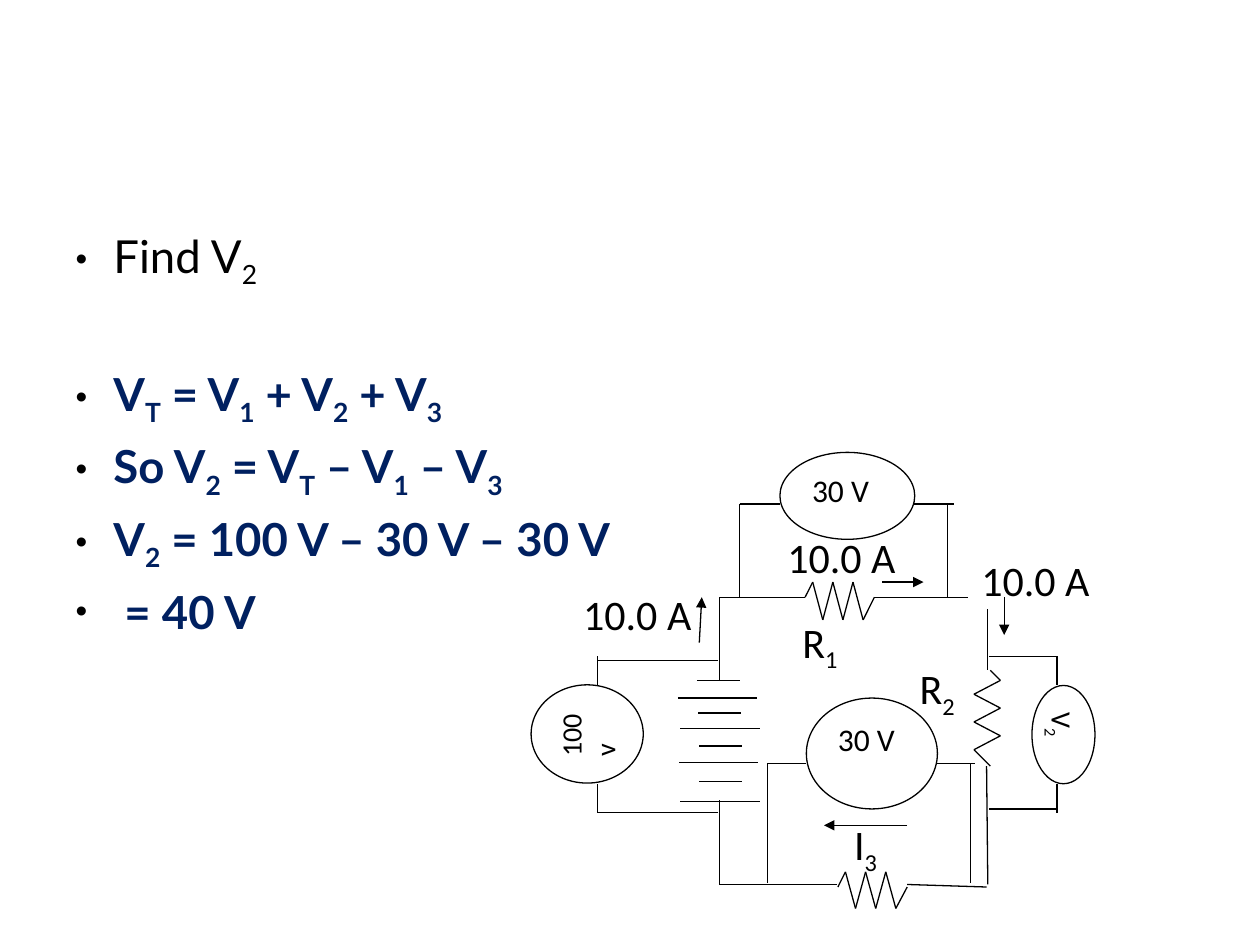
from lxml import etree
from pptx import Presentation
from pptx.dml.color import RGBColor
from pptx.enum.shapes import MSO_CONNECTOR, MSO_SHAPE
from pptx.enum.text import MSO_ANCHOR, MSO_AUTO_SIZE, PP_ALIGN
from pptx.oxml.ns import qn
from pptx.util import Cm, Pt

LINE = MSO_CONNECTOR.STRAIGHT
RECT, OVAL = MSO_SHAPE.RECTANGLE, MSO_SHAPE.OVAL
LEFT, TOP = PP_ALIGN.LEFT, MSO_ANCHOR.TOP
NOFIT = MSO_AUTO_SIZE.NONE
COLOURS = {"ink": "000000", "navy": "002060", "paper": "FFFFFF"}

STEPS = [
    ("Find V_2", "ink", 0),
    ("V_T = V_1 + V_2 + V_3", "navy", 43.2),
    ("So V_2 = V_T – V_1 – V_3", "navy", 6),
    ("V_2 = 100 V – 30 V – 30 V", "navy", 6),
    (" = 40 V", "navy", 6),
]
NAMES = [
    ("R_2", 7.2, 5.21, 0.77),
    ("R_1", 6.27, 4.84, 0.77),
    ("I_3", 6.68, 6.45, 0.77),
    ("10.0 A", 6.15, 4.17, 1.16),
]
AMPS = [("10.0 A", 4.53, 4.62, 1.16), ("10.0 A", 7.69, 4.35, 1.16)]
METERS = [
    ("30 V", (6.19, 3.59, 1.07, 0.69), 18, 0),
    ("V_2", (8.05, 5.58, 0.78, 0.5), 16, 90),
    ("30 V", (6.4, 5.54, 1.04, 0.88), 18, 0),
    ("100v", (4.27, 5.38, 0.78, 0.89), 16, 270),
]
WIRES = [
    [(6.94, 4.74), (7.83, 4.74)],
    [(6.39, 4.74), (5.71, 4.74), (5.71, 5.4)],
    [(7.84, 4.74), (7.84, 5.32)],
    [(7.83, 6.08), (7.84, 7.02)],
    [(7.83, 7.04), (7.2, 7.02)],
    [(6.64, 7.02), (5.71, 7.02), (5.71, 6.35)],
    [(5.87, 4.74), (5.87, 4), (6.19, 4)],
    [(7.52, 4.74), (7.52, 4)],
    [(7.25, 4), (7.57, 4)],
    [(7.85, 5.21), (8.39, 5.21), (8.39, 5.44)],
    [(7.85, 6.42), (8.39, 6.42)],
    [(8.39, 6.22), (8.39, 6.45)],
    [(6.09, 7.01), (6.09, 6.06), (6.4, 6.06)],
    [(7.7, 7.01), (7.7, 6.06)],
    [(7.44, 6.06), (7.74, 6.06)],
    [(5.7, 6.45), (4.74, 6.45), (4.74, 6.22)],
    [(5.7, 5.24), (4.74, 5.24)],
    [(4.74, 5.44), (4.74, 5.21)],
]
PLATES = [
    (5.53, 5.4, 0.34), (5.38, 5.54, 0.63), (5.54, 5.66, 0.34), (5.4, 5.78, 0.63),
    (5.55, 5.92, 0.34), (5.39, 6.05, 0.63), (5.55, 6.2, 0.34), (5.4, 6.36, 0.63),
]
ARROWS = [
    ((5.55, 5.1), (5.57, 4.74)),
    ((7, 4.62), (7.33, 4.62)),
    ((7.97, 4.74), (7.97, 5.04)),
    ((7.2, 6.55), (6.54, 6.55)),
]


def size(*inches):
    """Turn inches into lengths."""
    return [Cm(2.54 * n) for n in inches]


def hue(name):
    """Look up a colour."""
    return RGBColor.from_string(COLOURS[name])


def write(para, text, face, points, ink="ink", bold=False):
    """Fill a paragraph; the letter after each underscore is a subscript."""
    first, *rest = text.split("_")
    parts = [(first, False)]
    for part in rest:
        parts += [(part[0], True), (part[1:], False)]
    for word, sub in parts:
        if word:
            run = para.add_run()
            run.text = word
            run.font.name, run.font.size = face, Pt(points)
            run.font.bold = bold
            run.font.color.rgb = hue(ink)
            if sub:
                run.font._element.set("baseline", "-25000")


def bullet(para):
    """Give a paragraph a small round bullet and a hanging indent."""
    props = para._p.get_or_add_pPr()
    left = size(0.3)[0]
    props.set("marL", str(left))
    props.set("indent", str(-left))
    tint = etree.SubElement(props, qn("a:buClr"))
    etree.SubElement(tint, qn("a:srgbClr"), val=COLOURS["ink"])
    etree.SubElement(props, qn("a:buSzPct"), val="73000")
    etree.SubElement(props, qn("a:buChar"), char="•")


def body(slide):
    """Write the worked steps into the body placeholder."""
    box = slide.placeholders[1]
    box.left, box.top, box.width, box.height = size(0.5, 1.76, 7.92, 5.3)
    frame = box.text_frame
    frame.auto_size = NOFIT
    for i, (text, ink, gap) in enumerate(STEPS):
        para = frame.add_paragraph() if i else frame.paragraphs[0]
        bullet(para)
        para.space_before = Pt(gap)
        write(para, text, "Lato", 26, ink, ink == "navy")


def shape(shapes, kind, area, text, points, edge, turn=0):
    """Add a white shape with text at its top left."""
    item = shapes.add_shape(kind, *size(*area))
    item.shadow.inherit = False
    item.rotation = turn
    item.fill.solid()
    item.fill.fore_color.rgb = hue("paper")
    item.line.color.rgb = hue(edge)
    item.line.width = Pt(0.75)
    frame = item.text_frame
    frame.word_wrap, frame.vertical_anchor = True, TOP
    para = frame.paragraphs[0]
    para.alignment = LEFT
    write(para, text, "Calibri", points)


def label(shapes, text, x, y, width):
    """Add a label on a white box."""
    shape(shapes, RECT, (x, y, width, 0.48), text, 24, "paper")


def wire(shapes, start, end, head=False):
    """Add one straight line, with an arrowhead if asked."""
    item = shapes.add_connector(LINE, *size(*start, *end))
    item.line.color.rgb = hue("ink")
    item.line.width = Pt(0.75)
    if head:
        etree.SubElement(item.line._get_or_add_ln(), qn("a:tailEnd"), type="triangle")
    etree.SubElement(item._element.spPr, qn("a:effectLst"))


def trace(shapes, points):
    """Join points with lines."""
    for start, end in zip(points, points[1:]):
        wire(shapes, start, end)


def zigzag(start, end, first, step, sides, count, down=False):
    """List the points of a resistor, across or down."""
    peaks = [(first + step * i, sides[i % 2]) for i in range(count)]
    if down:
        peaks = [(x, y) for y, x in peaks]
    return [start, *peaks, end]


def circuit(shapes):
    """Draw the circuit from back to front."""
    for name in NAMES:
        label(shapes, *name)
    coils = [
        zigzag((6.39, 4.74), (6.94, 4.74), 6.45, 0.08, (4.62, 4.92), 6),
        zigzag((7.86, 5.32), (7.86, 6.08), 5.4, 0.11, (7.94, 7.73), 6, True),
        zigzag((6.65, 7.04), (7.2, 7.04), 6.71, 0.08, (6.92, 7.21), 6),
    ]
    for points in coils + WIRES:
        trace(shapes, points)
    for x, y, width in PLATES:
        wire(shapes, (x, y), (x + width, y))
    for text, area, points, turn in METERS:
        shape(shapes, OVAL, area, text, points, "ink", turn)
    for amp in AMPS:
        label(shapes, *amp)
    for start, end in ARROWS:
        wire(shapes, start, end, True)


def main():
    """Build and save the slide."""
    deck = Presentation()
    deck.slide_width, deck.slide_height = size(10, 7.5)
    slide = deck.slides.add_slide(deck.slide_layouts[1])
    title = slide.shapes.title._element
    title.getparent().remove(title)
    body(slide)
    circuit(slide.shapes.add_group_shape().shapes)
    deck.save("out.pptx")


if __name__ == "__main__":
    main()
